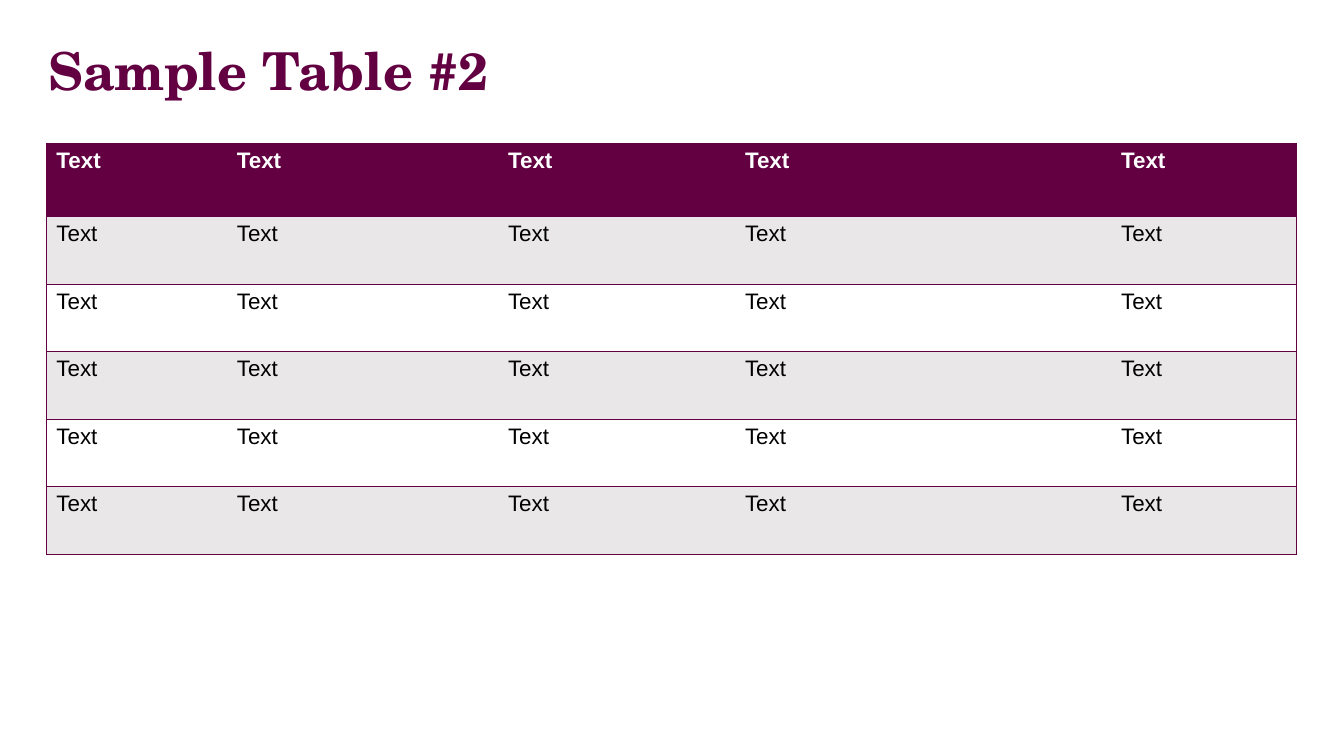
from pptx import Presentation, util as u
from pptx.dml.color import RGBColor
from pptx.enum import text
from pptx.oxml import ns
from lxml import etree

TITLE = "Sample Table #2"
ROWS = [["Text"] * 5 for _ in range(6)]
WIDTHS = [1.79, 2.69, 2.35, 3.73, 1.84]
HEAD, BODY = 0.73, 0.67
PLUM, GREY, WHITE, BLACK = "620042", "EAE7E9", "FFFFFF", "000000"


def paint(fill, color):
    fill.solid()
    fill.fore_color.rgb = RGBColor.from_string(color)


def write(para, words, font, size, color, bold):
    run = para.add_run()
    run.text = words
    run.font.name = font
    run.font.size = u.Pt(size)
    run.font.bold = bold
    paint(run.font.fill, color)


def edge(cell, side, shown):
    line = etree.SubElement(cell._tc.get_or_add_tcPr(), ns.qn("a:ln" + side))
    line.set("w", str(u.Pt(1)))
    if shown:
        fill = etree.SubElement(line, ns.qn("a:solidFill"))
        etree.SubElement(fill, ns.qn("a:srgbClr")).set("val", PLUM)
    else:
        etree.SubElement(line, ns.qn("a:noFill"))


def add_title(slide):
    box = slide.shapes.add_textbox(u.Inches(0.38), u.Inches(0), u.Inches(12.53), u.Inches(1.45))
    frame = box.text_frame
    frame.word_wrap = True
    frame.vertical_anchor = text.MSO_ANCHOR.MIDDLE
    para = frame.paragraphs[0]
    para.line_spacing = 0.9
    write(para, TITLE, "TeX Gyre Schola", 37.3, PLUM, True)


def add_grid(slide):
    tall = HEAD + BODY * (len(ROWS) - 1)
    grid = slide.shapes.add_table(
        len(ROWS), len(WIDTHS), u.Inches(0.46), u.Inches(1.42),
        u.Inches(sum(WIDTHS)), u.Inches(tall)).table
    grid.horz_banding = False
    for col, width in zip(grid.columns, WIDTHS):
        col.width = u.Inches(width)
    last = len(WIDTHS) - 1
    for r, row in enumerate(ROWS):
        head = r == 0
        grid.rows[r].height = u.Inches(HEAD if head else BODY)
        back = PLUM if head else GREY if r % 2 else WHITE
        for c, words in enumerate(row):
            cell = grid.cell(r, c)
            for side, shown in (("L", c == 0), ("R", c == last), ("T", True), ("B", True)):
                edge(cell, side, shown)
            paint(cell.fill, back)
            write(cell.text_frame.paragraphs[0], words, "Arial", 16,
                  WHITE if head else BLACK, head)


def main():
    deck = Presentation()
    deck.slide_width, deck.slide_height = u.Inches(13.33), u.Inches(7.5)
    slide = deck.slides.add_slide(deck.slide_layouts[6])
    add_grid(slide)
    add_title(slide)
    deck.save("out.pptx")


if __name__ == "__main__":
    main()
